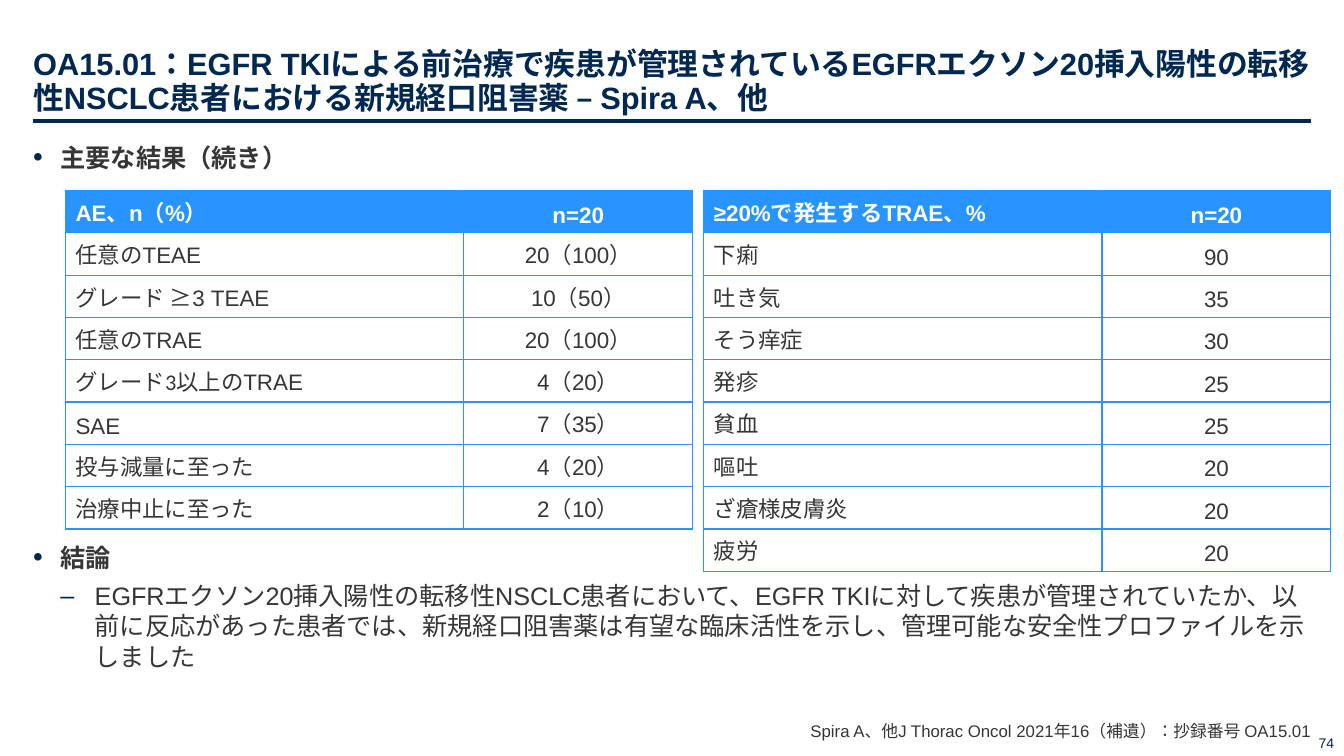
from dataclasses import dataclass

import pptx
import pptx.dml.color
import pptx.enum.lang
import pptx.enum.shapes
import pptx.enum.text
import pptx.oxml
import pptx.oxml.ns
import pptx.util

Inches = pptx.util.Inches
Pt = pptx.util.Pt
ALIGN = pptx.enum.text.PP_ALIGN
ANCHOR = pptx.enum.text.MSO_ANCHOR

COLORS = {"navy": "002850", "ink": "363636", "blue": "2894FF", "white": "FFFFFF"}
ROW_HEIGHT = 0.42
COLUMN_WIDTHS = (3.95, 2.27)


@dataclass(frozen=True)
class Piece:
    text: str
    size: float
    color: str = "ink"
    bold: bool = False
    font: str = "Arial"


@dataclass(frozen=True)
class Line:
    pieces: tuple[Piece, ...]
    align: ALIGN = ALIGN.LEFT
    spacing: float = 1.0
    before: float = 0
    after: float = 0
    bullet: str = ""
    bullet_percent: int = 100
    margin: float = 0
    hanging: float = 0
    level: int = 0


@dataclass(frozen=True)
class TextBlock:
    box: tuple[float, float, float, float]
    lines: tuple[Line, ...]
    insets: tuple[float, float, float, float] = (0, 0, 0, 0)
    anchor: ANCHOR = ANCHOR.BOTTOM


@dataclass(frozen=True)
class EventTable:
    left: float
    heading: str
    rows: tuple[tuple[str | tuple[Piece, ...], str], ...]


def rgb(name: str) -> pptx.dml.color.RGBColor:
    return pptx.dml.color.RGBColor.from_string(COLORS[name])


def write_line(paragraph, line: Line) -> None:
    paragraph.alignment = line.align
    paragraph.level = line.level
    paragraph.line_spacing = line.spacing
    paragraph.space_before = Pt(line.before)
    paragraph.space_after = Pt(line.after)
    for piece in line.pieces:
        run = paragraph.add_run()
        run.text = piece.text
        run.font.name = piece.font
        run.font.size = Pt(piece.size)
        run.font.bold = piece.bold
        run.font.color.rgb = rgb(piece.color)
        run.font.language_id = pptx.enum.lang.MSO_LANGUAGE_ID.JAPANESE
    if line.bullet:
        properties = paragraph._p.get_or_add_pPr()
        properties.set("marL", str(Inches(line.margin)))
        properties.set("indent", str(-Inches(line.hanging)))
        namespace = pptx.oxml.ns.nsdecls("a")
        for markup in (
            f'<a:buClr {namespace}><a:srgbClr val="{COLORS["navy"]}"/></a:buClr>',
            f'<a:buSzPct {namespace} val="{line.bullet_percent * 1000}"/>',
            f'<a:buFont {namespace} typeface="Arial"/>',
            f'<a:buChar {namespace} char="{line.bullet}"/>',
        ):
            properties.append(pptx.oxml.parse_xml(markup))


def add_text(slide, block: TextBlock) -> None:
    frame = slide.shapes.add_textbox(*map(Inches, block.box)).text_frame
    frame.word_wrap = True
    frame.vertical_anchor = block.anchor
    frame.margin_left, frame.margin_top, frame.margin_right, frame.margin_bottom = map(
        Inches, block.insets
    )
    for index, line in enumerate(block.lines):
        write_line(frame.add_paragraph() if index else frame.paragraphs[0], line)


def outline_cell(cell) -> None:
    properties = cell._tc.get_or_add_tcPr()
    for side in ("lnL", "lnR", "lnT", "lnB"):
        properties.append(pptx.oxml.parse_xml(
            f'<a:{side} {pptx.oxml.ns.nsdecls("a")} w="{Pt(1)}"><a:solidFill>'
            f'<a:srgbClr val="{COLORS["blue"]}"/></a:solidFill></a:{side}>'
        ))


def add_events(slide, events: EventTable) -> None:
    rows = ((events.heading, "n=20"),) + events.rows
    table = slide.shapes.add_table(
        len(rows), len(COLUMN_WIDTHS), Inches(events.left), Inches(1.89),
        Inches(sum(COLUMN_WIDTHS)), Inches(ROW_HEIGHT * len(rows)),
    ).table
    table.horz_banding = False
    for column, width in zip(table.columns, COLUMN_WIDTHS):
        column.width = Inches(width)
    for row_index, row in enumerate(rows):
        table.rows[row_index].height = Inches(ROW_HEIGHT)
        is_heading = row_index == 0
        for column_index, content in enumerate(row):
            cell = table.cell(row_index, column_index)
            cell.vertical_anchor = ANCHOR.BOTTOM
            outline_cell(cell)
            if is_heading:
                cell.fill.solid()
                cell.fill.fore_color.rgb = rgb("blue")
            else:
                cell.fill.background()
            if isinstance(content, str):
                content = (Piece(content, 16, "white" if is_heading else "ink", is_heading),)
            align = ALIGN.CENTER if column_index else ALIGN.LEFT
            write_line(cell.text_frame.paragraphs[0], Line(content, align))


def add_title_rule(slide) -> None:
    rule = slide.shapes.add_connector(
        pptx.enum.shapes.MSO_CONNECTOR.STRAIGHT,
        Inches(0.33), Inches(1.2), Inches(13), Inches(1.2),
    )
    rule.line.color.rgb = rgb("navy")
    rule.line.width = Pt(2.25)
    rule._element.spPr.append(
        pptx.oxml.parse_xml(f'<a:effectLst {pptx.oxml.ns.nsdecls("a")}/>')
    )


def section(text: str, before: float = 0) -> Line:
    return Line((Piece(text, 18, bold=True),), before=before, after=6,
                bullet="•", bullet_percent=110, margin=0.27, hanging=0.27)


TEXT_BLOCKS = (
    TextBlock((12.68, 7.1, 0.65, 0.4), (Line((Piece("74", 10, "navy"),), ALIGN.RIGHT),),
              (0.1, 0.05, 0.1, 0.05)),
    TextBlock((0.33, 0.12, 12.86, 1.03), (Line((Piece(
        "OA15.01：EGFR TKIによる前治療で疾患が管理されているEGFRエクソン20挿入陽性の"
        "転移性NSCLC患者における新規経口阻害薬 – Spira A、他", 22, "navy", True),),
        spacing=0.9),), (0, 0.05, 0, 0)),
    TextBlock((0.33, 1.36, 12.66, 5.53), (
        section("主要な結果（続き）"),
        section("結論", before=258),
        Line((Piece(
            "EGFRエクソン20挿入陽性の転移性NSCLC患者において、EGFR TKIに対して疾患が"
            "管理されていたか、以前に反応があった患者では、新規経口阻害薬は有望な臨床活性を示し、"
            "管理可能な安全性プロファイルを示しました", 18),),
            after=6, bullet="–", margin=0.61, hanging=0.34, level=1),
    ), (0, 0.05, 0, 0.05), ANCHOR.TOP),
    TextBlock((6.98, 7.13, 6.02, 0.22), (Line((Piece(
        "Spira A、他J Thorac Oncol 2021年16（補遺）：抄録番号 OA15.01", 12),),
        ALIGN.RIGHT, before=6),)),
)

EVENT_TABLES = (
    EventTable(0.65, "AE、n（%）", (
        ("任意のTEAE", "20（100）"),
        ("グレード ≥3 TEAE", "10（50）"),
        ("任意のTRAE", "20（100）"),
        ((Piece("グレード", 16), Piece("3以上", 16, font="Calibri"), Piece("のTRAE", 16)),
         "4（20）"),
        ("SAE", "7（35）"),
        ("投与減量に至った", "4（20）"),
        ("治療中止に至った", "2（10）"),
    )),
    EventTable(6.98, "≥20%で発生するTRAE、%", (
        ("下痢", "90"), ("吐き気", "35"), ("そう痒症", "30"), ("発疹", "25"),
        ("貧血", "25"), ("嘔吐", "20"), ("ざ瘡様皮膚炎", "20"), ("疲労", "20"),
    )),
)


def main() -> None:
    deck = pptx.Presentation()
    deck.slide_width, deck.slide_height = Inches(13.33), Inches(7.5)
    slide = deck.slides.add_slide(deck.slide_layouts[6])
    add_title_rule(slide)
    for block in TEXT_BLOCKS:
        add_text(slide, block)
    for events in EVENT_TABLES:
        add_events(slide, events)
    deck.save("out.pptx")


if __name__ == "__main__":
    main()
